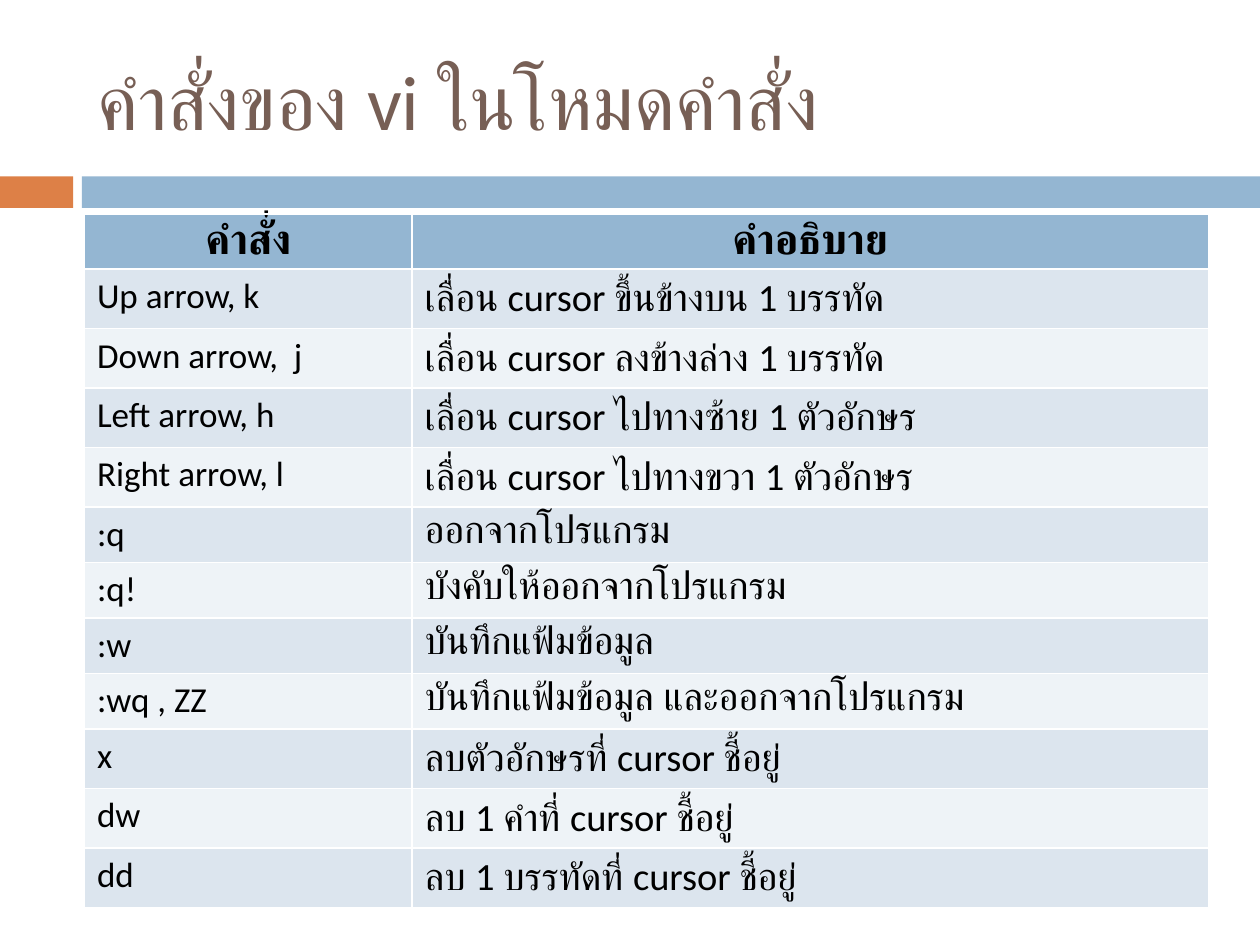
"""Build a slide listing the vi commands of command mode."""
from pptx import Presentation
from pptx.dml.color import RGBColor
from pptx.enum.shapes import MSO_SHAPE
from pptx.enum.text import MSO_ANCHOR, PP_ALIGN
from pptx.util import Inches, Pt

RECTANGLE = MSO_SHAPE.RECTANGLE
MIDDLE = MSO_ANCHOR.MIDDLE
LEFT, CENTER = PP_ALIGN.LEFT, PP_ALIGN.CENTER

TITLE = "คำสั่งของ vi ในโหมดคำสั่ง"
HEADER = ("คำสั่ง", "คำอธิบาย")
COMMANDS = [
    ("Up arrow, k", "เลื่อน cursor ขึ้นข้างบน 1 บรรทัด"),
    ("Down arrow,  j", "เลื่อน cursor ลงข้างล่าง 1 บรรทัด"),
    ("Left arrow, h", "เลื่อน cursor ไปทางซ้าย 1 ตัวอักษร"),
    ("Right arrow, l", "เลื่อน cursor ไปทางขวา 1 ตัวอักษร"),
    (":q", "ออกจากโปรแกรม"),
    (":q!", "บังคับให้ออกจากโปรแกรม"),
    (":w", "บันทึกแฟ้มข้อมูล"),
    (":wq , ZZ", "บันทึกแฟ้มข้อมูล และออกจากโปรแกรม"),
    ("x", "ลบตัวอักษรที่ cursor ชี้อยู่"),
    ("dw", "ลบ 1 คำที่ cursor ชี้อยู่"),
    ("dd", "ลบ 1 บรรทัดที่ cursor ชี้อยู่"),
]

SLIDE_WIDTH, SLIDE_HEIGHT = 10, 7.5
CONTENT_LEFT, CONTENT_WIDTH = 0.67, 8.92
BAR_TOP, BAR_HEIGHT = 1.4, 0.25
BARS = [(0, 0.58, "DD8047"), (0.65, SLIDE_WIDTH - 0.65, "94B6D2")]
TABLE_TOP, ROW_HEIGHT = 1.7, 0.41
COLUMN_WIDTHS = (2.6, CONTENT_WIDTH - 2.6)
BAND_FILLS = ("DCE5EE", "EEF3F7")

TITLE_FORMAT = {"name": "Calibri", "size": Pt(44)}
HEADER_FORMAT = {"name": "Calibri", "size": Pt(24), "bold": True}
COLUMN_FORMATS = [{"name": "Calibri", "size": Pt(size), "bold": False} for size in (20, 22)]


def set_color(color_format, value):
    color_format.rgb = RGBColor.from_string(value)


def set_fill(target, value):
    target.fill.solid()
    set_color(target.fill.fore_color, value)


def write_text(text_frame, text, font_format, color, alignment):
    paragraph = text_frame.paragraphs[0]
    paragraph.alignment = alignment
    run = paragraph.add_run()
    run.text = text
    for name, value in font_format.items():
        setattr(run.font, name, value)
    set_color(run.font.color, color)


def add_bars(slide):
    for left, width, color in BARS:
        bar = slide.shapes.add_shape(
            RECTANGLE, Inches(left), Inches(BAR_TOP), Inches(width), Inches(BAR_HEIGHT))
        bar.shadow.inherit = False
        bar.line.fill.background()
        set_fill(bar, color)


def add_title(slide):
    title = slide.shapes.title
    position = {"left": CONTENT_LEFT, "top": 0.25, "width": CONTENT_WIDTH, "height": 1.08}
    for name, value in position.items():
        setattr(title, name, Inches(value))
    title.text_frame.vertical_anchor = MIDDLE
    write_text(title.text_frame, TITLE, TITLE_FORMAT, "775F55", LEFT)


def add_command_table(slide):
    rows = [HEADER, *COMMANDS]
    table = slide.shapes.add_table(
        len(rows), len(COLUMN_WIDTHS), Inches(CONTENT_LEFT), Inches(TABLE_TOP),
        Inches(CONTENT_WIDTH), Inches(ROW_HEIGHT * len(rows))).table
    for column, width in zip(table.columns, COLUMN_WIDTHS):
        column.width = Inches(width)
    for row_index, texts in enumerate(rows):
        table.rows[row_index].height = Inches(ROW_HEIGHT)
        is_header = row_index == 0
        fill = "94B6D2" if is_header else BAND_FILLS[(row_index - 1) % 2]
        for column_index, text in enumerate(texts):
            cell = table.cell(row_index, column_index)
            set_fill(cell, fill)
            font_format = HEADER_FORMAT if is_header else COLUMN_FORMATS[column_index]
            write_text(cell.text_frame, text, font_format, "000000",
                       CENTER if is_header else LEFT)


def main():
    presentation = Presentation()
    presentation.slide_width = Inches(SLIDE_WIDTH)
    presentation.slide_height = Inches(SLIDE_HEIGHT)
    slide = presentation.slides.add_slide(presentation.slide_layouts[5])
    add_bars(slide)
    add_title(slide)
    add_command_table(slide)
    presentation.save("out.pptx")


if __name__ == "__main__":
    main()
